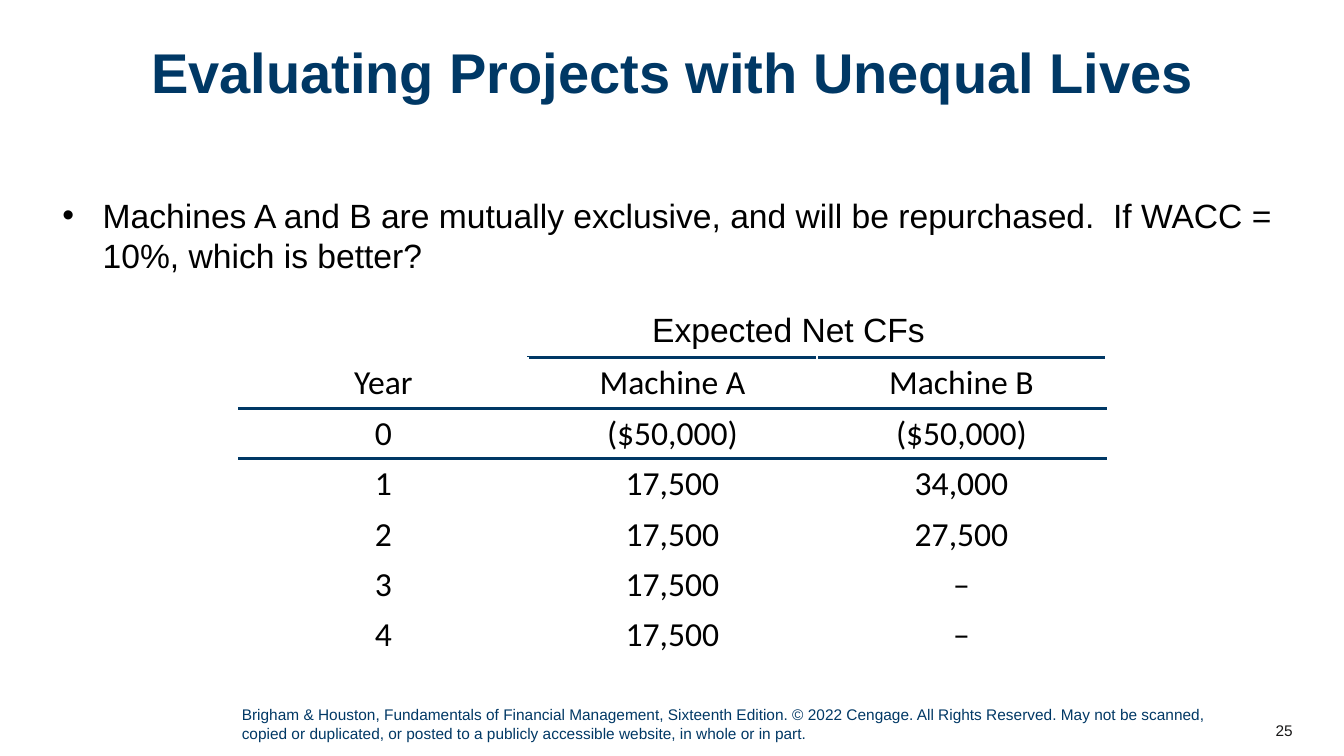
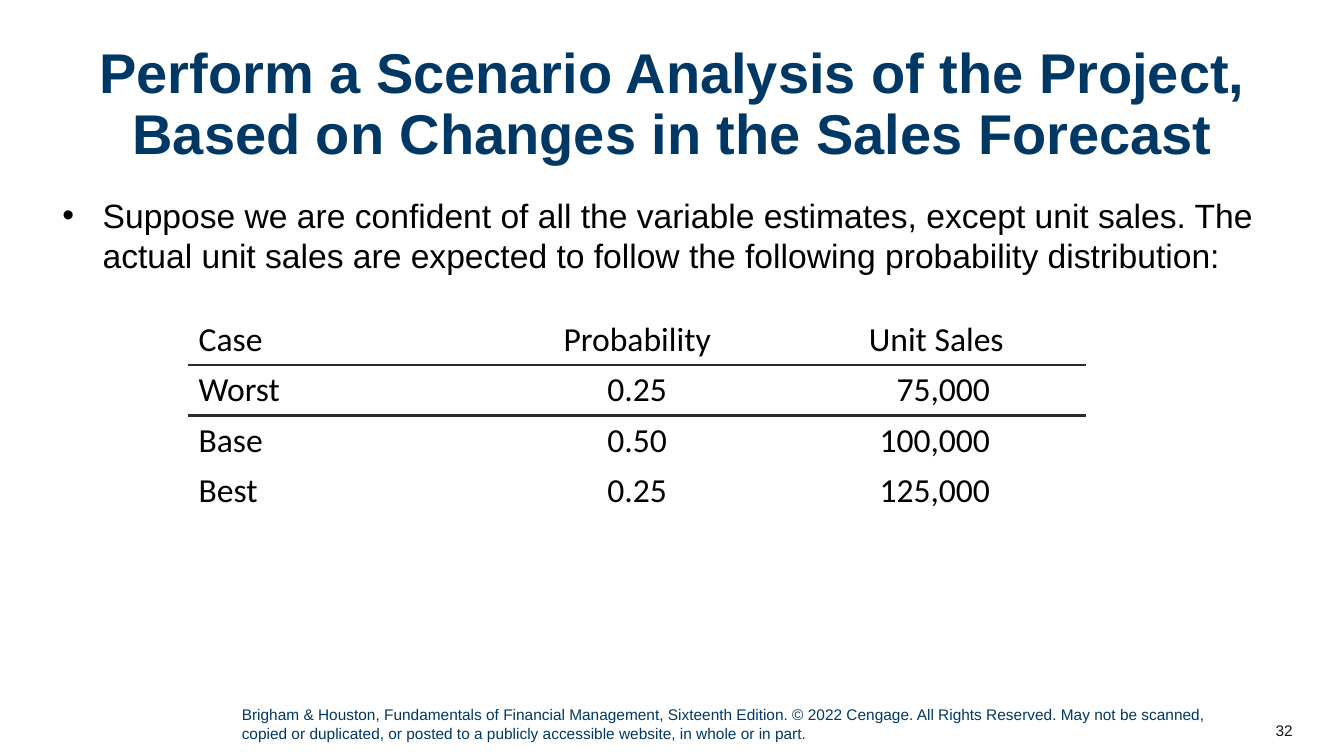
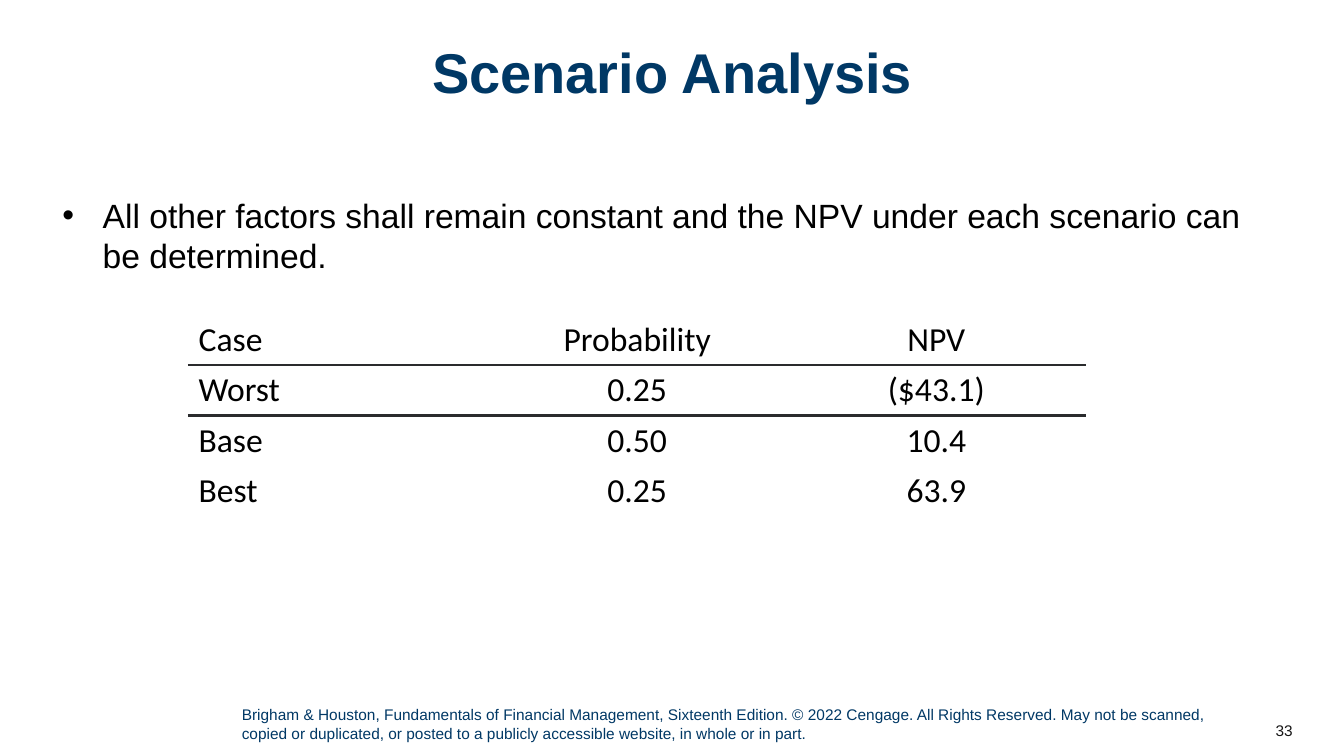
import pptx
import pptx.util
import pptx.dml.color
import pptx.enum.text
import pptx.oxml
import pptx.oxml.ns
import lxml.etree

WIDTH, HEIGHT = 13.33, 7.5
NAVY, BLACK, WHITE, CHARCOAL, INK = "003865", "000000", "FFFFFF", "2A2B2D", "181717"
HEAD_FONT, TABLE_FONT = "Arial", "Calibri"
RULE, HAIRLINE = 2.25, 1
ROW = 0.5
MARGIN = 0.52
CONTENT = WIDTH - 2 * MARGIN
LEFT = pptx.enum.text.PP_ALIGN.LEFT
CENTER = pptx.enum.text.PP_ALIGN.CENTER
RIGHT = pptx.enum.text.PP_ALIGN.RIGHT
TOP = pptx.enum.text.MSO_ANCHOR.TOP
MIDDLE = pptx.enum.text.MSO_ANCHOR.MIDDLE
FOOTER = (
    "Brigham & Houston, Fundamentals of Financial Management, Sixteenth Edition. "
    "© 2022 Cengage. All Rights Reserved. May not be scanned, copied or duplicated, "
    "or posted to a publicly accessible website, in whole or in part."
)


def rgb(color):
    return pptx.dml.color.RGBColor.from_string(color)


def add_element(parent, tag, **attrs):
    return lxml.etree.SubElement(parent, pptx.oxml.ns.qn(tag), attrs)


def write(tf, text, size=24, font=HEAD_FONT, color=BLACK, bold=False, align=LEFT,
          spacing=None, after=0, indent=0, bullet=None):
    p = tf.paragraphs[0]
    pPr = p._p.get_or_add_pPr()
    if indent:
        pPr.set("marL", str(pptx.util.Inches(indent)))
    if bullet:
        pPr.set("indent", str(-pptx.util.Inches(indent)))
        add_element(add_element(pPr, "a:buClr"), "a:srgbClr", val=color)
        add_element(pPr, "a:buFont", typeface=font)
        add_element(pPr, "a:buChar", char=bullet)
    p.alignment = align
    p.line_spacing = spacing
    p.space_after = pptx.util.Pt(after)
    r = p.add_run()
    r.text = text
    r.font.size = pptx.util.Pt(size)
    r.font.name = font
    r.font.bold = bold
    r.font.color.rgb = rgb(color)


def text_box(s, box, text, anchor=TOP, **style):
    tf = s.shapes.add_textbox(*map(pptx.util.Inches, box)).text_frame
    tf.word_wrap = True
    tf.vertical_anchor = anchor
    write(tf, text, **style)


def set_borders(cell, **rules):
    tcPr = cell._tc.get_or_add_tcPr()
    for side in "LRTB":
        color = rules.get(side)
        width = pptx.util.Pt(RULE if color else HAIRLINE)
        ln = add_element(tcPr, "a:ln" + side, w=str(width))
        add_element(add_element(ln, "a:solidFill"), "a:srgbClr", val=color or WHITE)


def cash_table(s, left, top, width, rows, rule, aligns, head_rule=(), number_inset=None):
    cols = len(rows[0])
    frame = s.shapes.add_table(len(rows), cols, *map(
        pptx.util.Inches, (left, top, width, ROW * len(rows))))
    table = frame.table
    table.first_row = table.horz_banding = False
    for col in table.columns:
        col.width = pptx.util.Inches(width / cols)
    for i, row in enumerate(rows):
        for j, text in enumerate(row):
            cell = table.cell(i, j)
            rules = {}
            if i in (1, 2) or (i == 0 and j in head_rule):
                rules["T"] = rule
            if i in (0, 1):
                rules["B"] = rule
            set_borders(cell, **rules)
            cell.fill.background()
            align = aligns[j]
            if number_inset and i and j == cols - 1:
                align = RIGHT
                cell.margin_right = pptx.util.Inches(number_inset)
            write(cell.text_frame, text, font=TABLE_FONT, align=align)


def base_slide(prs, number, title, body):
    s = prs.slides.add_slide(prs.slide_layouts[6])
    text_box(s, (12.12, 7.05, 0.8, 0.4), str(number), anchor=MIDDLE,
             size=11, color=INK, align=RIGHT)
    text_box(s, (2.3, 6.95, 9.8, 0.47), FOOTER, size=11, color=NAVY)
    text_box(s, (MARGIN, 0.4, CONTENT, 1.33), title, size=40, color=NAVY,
             bold=True, align=CENTER, spacing=0.9)
    text_box(s, (MARGIN, 1.88, CONTENT, 0.9), body, after=8, indent=0.4, bullet="•")
    return s


def machines_slide(prs):
    s = base_slide(prs, 25, "Evaluating Projects with Unequal Lives",
                   "Machines A and B are mutually exclusive, and will be repurchased.  "
                   "If WACC = 10%, which is better?")
    left, top, width = 2.37, 3.55, 8.6
    text_box(s, (left, top - 0.53, width, 0.52), "Expected Net CFs", after=8, indent=4)
    rows = [
        ("Year", "Machine A", "Machine B"),
        ("0", "($50,000)", "($50,000)"),
        ("1", "17,500", "34,000"),
        ("2", "17,500", "27,500"),
        ("3", "17,500", "–"),
        ("4", "17,500", "–"),
    ]
    cash_table(s, left, top, width, rows, NAVY, (CENTER,) * 3, head_rule=(1, 2))


def scenario_slide(prs, number, title, body, measure, values, number_inset=None):
    s = base_slide(prs, number, title, body)
    cases = zip(("Worst", "Base", "Best"), ("0.25", "0.50", "0.25"), values)
    rows = [("Case", "Probability", measure), *cases]
    cash_table(s, 1.87, 3.12, 8.9, rows, CHARCOAL, (LEFT, CENTER, CENTER),
               number_inset=number_inset)


def main():
    prs = pptx.Presentation()
    prs.slide_width = pptx.util.Inches(WIDTH)
    prs.slide_height = pptx.util.Inches(HEIGHT)
    machines_slide(prs)
    scenario_slide(
        prs, 32,
        "Perform a Scenario Analysis of the Project, Based on Changes in the Sales Forecast",
        "Suppose we are confident of all the variable estimates, except unit sales. "
        "The actual unit sales are expected to follow the following probability distribution:",
        "Unit Sales", ("75,000", "100,000", "125,000"), number_inset=0.95)
    scenario_slide(
        prs, 33, "Scenario Analysis",
        "All other factors shall remain constant and the NPV under each scenario "
        "can be determined.",
        "NPV", ("($43.1)", "10.4", "63.9"))
    prs.save("out.pptx")


if __name__ == "__main__":
    main()
